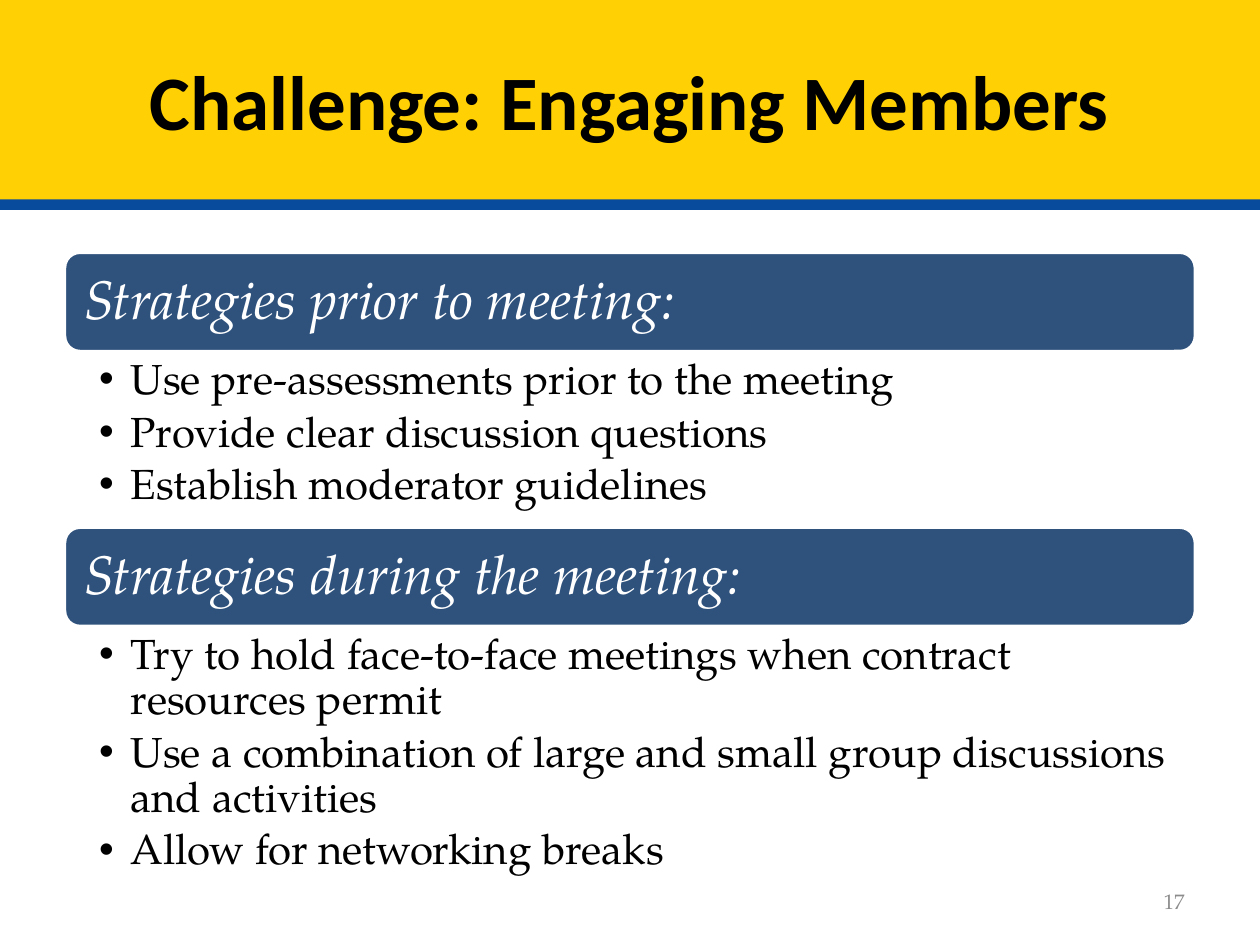
from dataclasses import dataclass

from lxml.etree import SubElement
from pptx import Presentation
from pptx.dml.color import RGBColor
from pptx.enum.shapes import MSO_SHAPE
from pptx.enum.text import MSO_ANCHOR, PP_ALIGN
from pptx.oxml.ns import qn
from pptx.util import Pt


@dataclass(frozen=True)
class Theme:
    gold: str = "FFD004"
    blue: str = "084A9C"
    navy: str = "2F527D"
    white: str = "FFFFFF"
    black: str = "000000"
    gray: str = "8C8C8C"
    head: str = "Calibri"
    body: str = "TeX Gyre Pagella"
    title: float = 44
    label: float = 31
    item: float = 24
    note: float = 12


theme = Theme()
deck = Presentation()
deck.slide_width, deck.slide_height = Pt(720), Pt(540)
slide = deck.slides.add_slide(deck.slide_layouts[6])


def add_block(kind, left, top, width, height, fill, edge=None):
    block = slide.shapes.add_shape(kind, Pt(left), Pt(top), Pt(width), Pt(height))
    block.shadow.inherit = False
    block.fill.solid()
    block.fill.fore_color.rgb = RGBColor.from_string(fill)
    if edge:
        block.line.color.rgb = RGBColor.from_string(edge)
        block.line.width = Pt(3.78)
    else:
        block.line.fill.background()
    return block


def set_text(shape, lines, size, color, font=theme.body, bold=False, italic=False,
             align=PP_ALIGN.LEFT, anchor=MSO_ANCHOR.MIDDLE, inset=(7.2, 3.6, 7.2, 3.6),
             pitch=1.0, after=0, bullet=False):
    """Fill a shape with paragraphs; inset runs left, top, right, bottom."""
    frame = shape.text_frame
    frame.word_wrap = True
    frame.vertical_anchor = anchor
    (frame.margin_left, frame.margin_top,
     frame.margin_right, frame.margin_bottom) = map(Pt, inset)
    frame.text = "\n".join(lines)
    for para in frame.paragraphs:
        para.alignment = align
        para.line_spacing = pitch
        para.space_after = Pt(after)
        face = para.runs[0].font
        face.name, face.size = font, Pt(size)
        face.bold, face.italic = bold, italic
        face.color.rgb = RGBColor.from_string(color)
        if bullet:
            props = para._p.get_or_add_pPr()
            props.set("marL", str(Pt(18)))
            props.set("indent", str(Pt(-18)))
            SubElement(props, qn("a:buFont"), typeface="Arial")
            SubElement(props, qn("a:buChar"), char="•")


# Title band with a blue strip below
add_block(MSO_SHAPE.RECTANGLE, 0, 6, 720, 114, theme.blue)
band = add_block(MSO_SHAPE.RECTANGLE, 0, 0, 720, 114, theme.gold)
set_text(band, ["Challenge: Engaging Members"], theme.title, theme.black,
         font=theme.head, bold=True, align=PP_ALIGN.CENTER)

# Each section: label, bullet items, height of the item box
sections = [
    ("Strategies prior to meeting:",
     ["Use pre-assessments prior to the meeting",
      "Provide clear discussion questions",
      "Establish moderator guidelines"], 98.6),
    ("Strategies during the meeting:",
     ["Try to hold face-to-face meetings when contract resources permit",
      "Use a combination of large and small group discussions and activities",
      "Allow for networking breaks"], 152),
]
left, top, width, bar = 36, 143.3, 648, 58.5
for label, items, height in sections:
    head = add_block(MSO_SHAPE.ROUNDED_RECTANGLE, left, top, width, bar,
                     theme.navy, edge=theme.white)
    set_text(head, [label], theme.label, theme.white, italic=True,
             inset=(9.4,) * 4, pitch=0.9)
    top += bar
    box = slide.shapes.add_textbox(Pt(left), Pt(top), Pt(width), Pt(height))
    set_text(box, items, theme.item, theme.black, anchor=MSO_ANCHOR.TOP,
             inset=(20.6, 3, 17, 3), pitch=0.9, after=4, bullet=True)
    top += height

# Slide number
box = slide.shapes.add_textbox(Pt(516), Pt(500.5), Pt(168), Pt(28.75))
set_text(box, ["17"], theme.note, theme.gray, align=PP_ALIGN.RIGHT)

deck.save("out.pptx")
